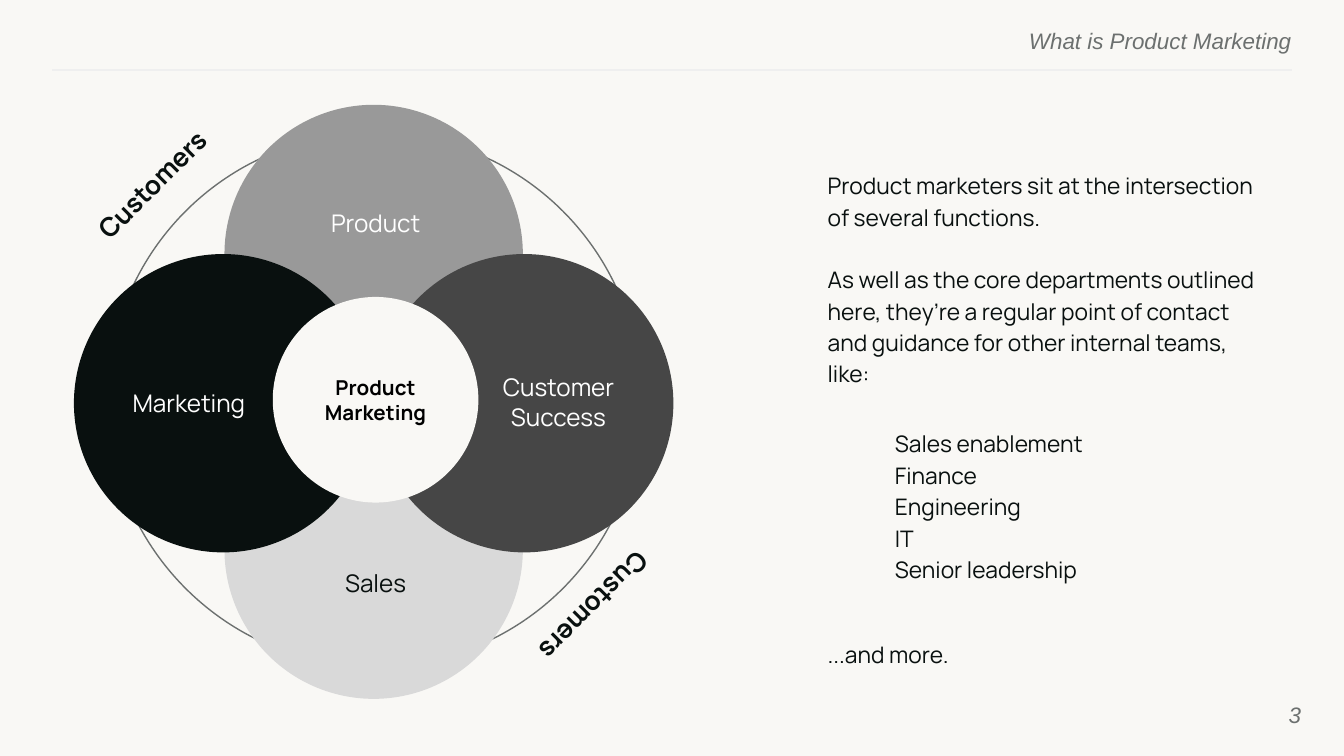
from pptx import Presentation
from pptx.dml.color import RGBColor
from pptx.enum.shapes import MSO_CONNECTOR, MSO_SHAPE
from pptx.enum.text import MSO_ANCHOR, PP_ALIGN
from pptx.oxml.ns import qn
from pptx.util import Inches, Pt
from lxml import etree

PAPER = RGBColor(0xF9, 0xF8, 0xF5)
INK = RGBColor(0x09, 0x10, 0x0F)
MUTED = RGBColor(0x6C, 0x70, 0x6F)
RULE = RGBColor(0xEF, 0xEF, 0xEF)
MID_GRAY = RGBColor(0x99, 0x99, 0x99)
LIGHT_GRAY = RGBColor(0xD9, 0xD9, 0xD9)
DARK_GRAY = RGBColor(0x46, 0x46, 0x46)
WHITE = RGBColor(0xFF, 0xFF, 0xFF)
BLACK = RGBColor(0x00, 0x00, 0x00)

OVAL, RECT = MSO_SHAPE.OVAL, MSO_SHAPE.RECTANGLE
STRAIGHT = MSO_CONNECTOR.STRAIGHT
LEFT, CENTER, RIGHT = PP_ALIGN.LEFT, PP_ALIGN.CENTER, PP_ALIGN.RIGHT
TOP, MIDDLE = MSO_ANCHOR.TOP, MSO_ANCHOR.MIDDLE

CIRCLE = 2.22
LABEL_W, LABEL_H = 1.53, 0.72
FUNCTIONS = [
    ("Product", 1.67, 0.78, 2.03, 1.3, MID_GRAY, WHITE),
    ("Sales", 1.67, 2.98, 2.03, 3.98, LIGHT_GRAY, INK),
    ("Marketing", 0.55, 1.89, 0.64, 2.64, INK, WHITE),
    ("Customer Success", 2.79, 1.89, 3.39, 2.63, DARK_GRAY, WHITE),
]
TEAMS = ["Sales enablement", "Finance", "Engineering", "IT", "Senior leadership"]


def write(p, text, size=13, font="Manrope", color=INK, bold=False, italic=False,
          align=LEFT, before=0, after=0, spacing=None, indent=0):
    p.alignment = align
    p.space_before, p.space_after = Pt(before), Pt(after)
    if spacing:
        p.line_spacing = spacing
    if indent:
        p._p.get_or_add_pPr().set("marL", str(Inches(indent)))
    r = p.add_run()
    r.text = text
    r.font.size, r.font.name = Pt(size), font
    r.font.bold, r.font.italic = bold, italic
    r.font.color.rgb = color


class Deck:
    def __init__(self):
        self.prs = Presentation()
        self.prs.slide_width = Inches(10)
        self.prs.slide_height = Inches(10 * 9 / 16)

    def add_slide(self):
        self.s = self.prs.slides.add_slide(self.prs.slide_layouts[6])
        fill = self.s.background.fill
        fill.solid()
        fill.fore_color.rgb = PAPER

    def line(self, x1, y1, x2, y2, color, width=0.75):
        c = self.s.shapes.add_connector(STRAIGHT, *map(Inches, (x1, y1, x2, y2)))
        c.line.color.rgb, c.line.width = color, Pt(width)
        etree.SubElement(c._element.spPr, qn("a:effectLst"))

    def frame(self, sp, anchor, x_inset, y_inset):
        tf = sp.text_frame
        tf.word_wrap, tf.vertical_anchor = True, anchor
        tf.margin_left = tf.margin_right = Inches(x_inset)
        tf.margin_top = tf.margin_bottom = Inches(y_inset)
        return tf

    def shape(self, kind, x, y, w, h, fill, line=None, text=None, **style):
        sp = self.s.shapes.add_shape(kind, *map(Inches, (x, y, w, h)))
        sp.shadow.inherit = False
        sp.fill.solid()
        sp.fill.fore_color.rgb = fill
        if line is None:
            sp.line.fill.background()
        else:
            sp.line.color.rgb, sp.line.width = line, Pt(0.75)
        if text:
            tf = self.frame(sp, MIDDLE, 0.1, 0.1)
            write(tf.paragraphs[0], text, align=CENTER, **style)

    def text(self, x, y, w, h, items, anchor=TOP, x_inset=0, y_inset=0,
             rotation=0, **style):
        sp = self.s.shapes.add_textbox(*map(Inches, (x, y, w, h)))
        sp.rotation = rotation
        tf = self.frame(sp, anchor, x_inset, y_inset)
        for i, (text, extra) in enumerate(items):
            p = tf.add_paragraph() if i else tf.paragraphs[0]
            write(p, text, **{**style, **extra})


def main():
    deck = Deck()
    deck.add_slide()

    small = dict(size=12, font="Arial", color=MUTED, italic=True, align=RIGHT)
    deck.line(9.61, 0.52, 0.39, 0.52, RULE)
    deck.text(5.76, 0.2, 3.85, 0.18, [("What is Product Marketing", {})], **small)

    body = [
        ("Product marketers sit at the intersection of several functions.",
         dict(before=6)),
        ("As well as the core departments outlined here, they’re a regular point "
         "of contact and guidance for other internal teams, like:",
         dict(before=16.8)),
    ]
    body += [(team, dict(indent=0.5, before=0 if i else 20.7))
             for i, team in enumerate(TEAMS)]
    body.append(("...and more.", dict(before=28.8, after=6)))
    deck.text(6.06, 1.2, 3.38, 3.22, body, x_inset=0.1, y_inset=0.05,
              size=12.2, spacing=1.15)

    deck.shape(OVAL, 0.8, 0.99, 3.97, 3.97, PAPER, MUTED)
    for name, x, y, label_x, label_y, fill, color in FUNCTIONS:
        deck.shape(OVAL, x, y, CIRCLE, CIRCLE, fill)
        deck.shape(RECT, label_x, label_y, LABEL_W, LABEL_H, fill,
                   text=name, color=color)
    deck.shape(OVAL, 2.03, 2.21, 1.53, 1.53, PAPER,
               text="Product Marketing", size=11, color=BLACK, bold=True)

    for x, y, rotation in ((0.18, 1.14, 315), (3.41, 4.22, 135)):
        deck.text(x, y, 1.96, 0.52, [("Customers", {})], x_inset=0.1, y_inset=0.1,
                  rotation=rotation, size=14, bold=True, align=CENTER)

    deck.text(9.08, 5.1, 0.6, 0.43, [("3", {})], anchor=MIDDLE, **small)
    deck.prs.save("out.pptx")


if __name__ == "__main__":
    main()
